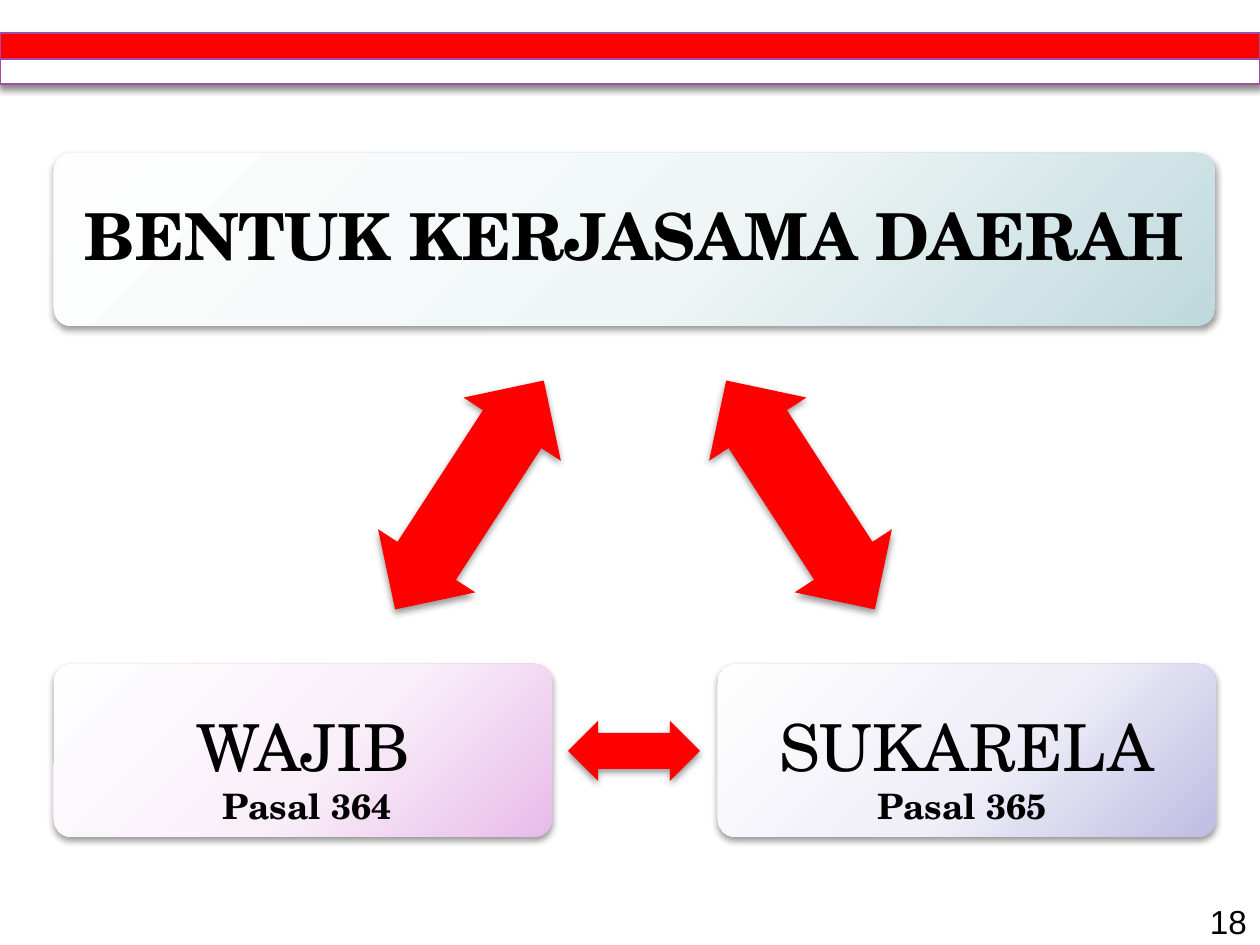
"""Build the slide on the forms of regional cooperation."""
import lxml.etree
import pptx
import pptx.dml.color
import pptx.enum.shapes
import pptx.enum.text
import pptx.oxml
import pptx.oxml.ns
import pptx.util

PX = 914400 / 126
THEME = {
    "serif": "TeX Gyre Schola", "sans": "Arial",
    "heading": 37, "article": 20, "number": 19,
    "red": "FF0000", "white": "FFFFFF", "black": "000000", "edge": "A04DA3",
    "teal": ("FEFEFE", "F0F6F6", "BFD9DD"),
    "violet": ("FEFEFE", "F0EFF8", "BEBDE3"),
    "pink": ("FEFEFF", "F9EFF9", "E8BBEA"),
}
SHAPES = pptx.enum.shapes.MSO_SHAPE
ALIGN = pptx.enum.text.PP_ALIGN
ANCHOR = pptx.enum.text.MSO_ANCHOR
NAMESPACE = pptx.oxml.ns.nsdecls("a")

presentation = pptx.Presentation()
presentation.slide_width = round(1260 * PX)
presentation.slide_height = round(945 * PX)
slide = presentation.slides.add_slide(presentation.slide_layouts[6])


def write_text(shape, text, *, size, font=THEME["serif"], bold=False, align=ALIGN.CENTER,
               anchor=ANCHOR.TOP, inset=(0, 0), spacing=1.0):
    frame = shape.text_frame
    frame.word_wrap = True
    frame.vertical_anchor = anchor
    frame.margin_left = frame.margin_right = round(inset[0] * PX)
    frame.margin_top = frame.margin_bottom = round(inset[1] * PX)
    paragraph = frame.paragraphs[0]
    paragraph.alignment = align
    paragraph.line_spacing = spacing
    run = paragraph.add_run()
    run.text = text
    run.font.name = font
    run.font.size = pptx.util.Pt(size)
    run.font.bold = bold
    run.font.color.rgb = pptx.dml.color.RGBColor.from_string(THEME["black"])


def add_block(kind, box, *, fill, line=None, rotation=0, adjustments=(), shadow_alpha=40):
    shape = slide.shapes.add_shape(kind, *(round(length * PX) for length in box))
    shape.rotation = rotation
    for index, value in enumerate(adjustments):
        shape.adjustments[index] = value
    if line:
        shape.line.color.rgb = pptx.dml.color.RGBColor.from_string(line)
        shape.line.width = pptx.util.Pt(0.75)
    else:
        shape.line.fill.background()
    if isinstance(fill, str):
        shape.fill.solid()
        shape.fill.fore_color.rgb = pptx.dml.color.RGBColor.from_string(fill)
    else:
        stops = "".join(f'<a:gs pos="{position}000"><a:srgbClr val="{color}"/></a:gs>'
                        for position, color in zip((0, 55, 100), fill))
        gradient = pptx.oxml.parse_xml(
            f'<a:gradFill {NAMESPACE} rotWithShape="1"><a:gsLst>{stops}</a:gsLst>'
            '<a:path path="circle"><a:fillToRect l="-40000" t="-90000" r="140000" b="190000"/>'
            '</a:path></a:gradFill>')
        shape._element.spPr.find(pptx.oxml.ns.qn("a:prstGeom")).addnext(gradient)
    shape.shadow.inherit = False
    effects = shape._element.spPr.find(pptx.oxml.ns.qn("a:effectLst"))
    effects.append(pptx.oxml.parse_xml(
        f'<a:outerShdw {NAMESPACE} blurRad="52000" dist="25400" dir="5400000" rotWithShape="0">'
        f'<a:srgbClr val="{THEME["black"]}"><a:alpha val="{shadow_alpha}000"/></a:srgbClr>'
        '</a:outerShdw>'))
    return shape


for top, height, color in ((33, 26, "red"), (59, 25, "white")):
    add_block(SHAPES.RECTANGLE, (0, top, 1260, height), fill=THEME[color],
              line=THEME["edge"], shadow_alpha=45)

for text, box, color, bold in (
    ("BENTUK KERJASAMA DAERAH", (54, 153, 1161, 173), "teal", True),
    ("WAJIB", (54, 664, 498, 173), "pink", False),
    ("SUKARELA", (718, 664, 498, 173), "violet", False),
):
    card = add_block(SHAPES.ROUNDED_RECTANGLE, box, fill=THEME[color], adjustments=(0.1,))
    write_text(card, text, size=THEME["heading"], bold=bold, anchor=ANCHOR.MIDDLE,
               inset=(19, 19), spacing=0.9)

for box, rotation in (
    ((333, 437, 273, 116), 303),
    ((664, 437, 273, 116), 57),
    ((568, 721, 132, 60), 180),
):
    add_block(SHAPES.LEFT_RIGHT_ARROW, box, fill=THEME["red"], rotation=rotation,
              adjustments=(0.6, 0.5))

for text, box, style in (
    ("Pasal 364", (64, 785, 486, 50), {"size": THEME["article"], "bold": True}),
    ("Pasal 365", (719, 785, 486, 50), {"size": THEME["article"], "bold": True}),
    ("18", (1197, 895, 63, 50), {"size": THEME["number"], "font": THEME["sans"],
                                 "align": ALIGN.LEFT, "inset": (13, 6)}),
):
    label = slide.shapes.add_textbox(*(round(length * PX) for length in box))
    write_text(label, text, **style)

presentation.save("out.pptx")
